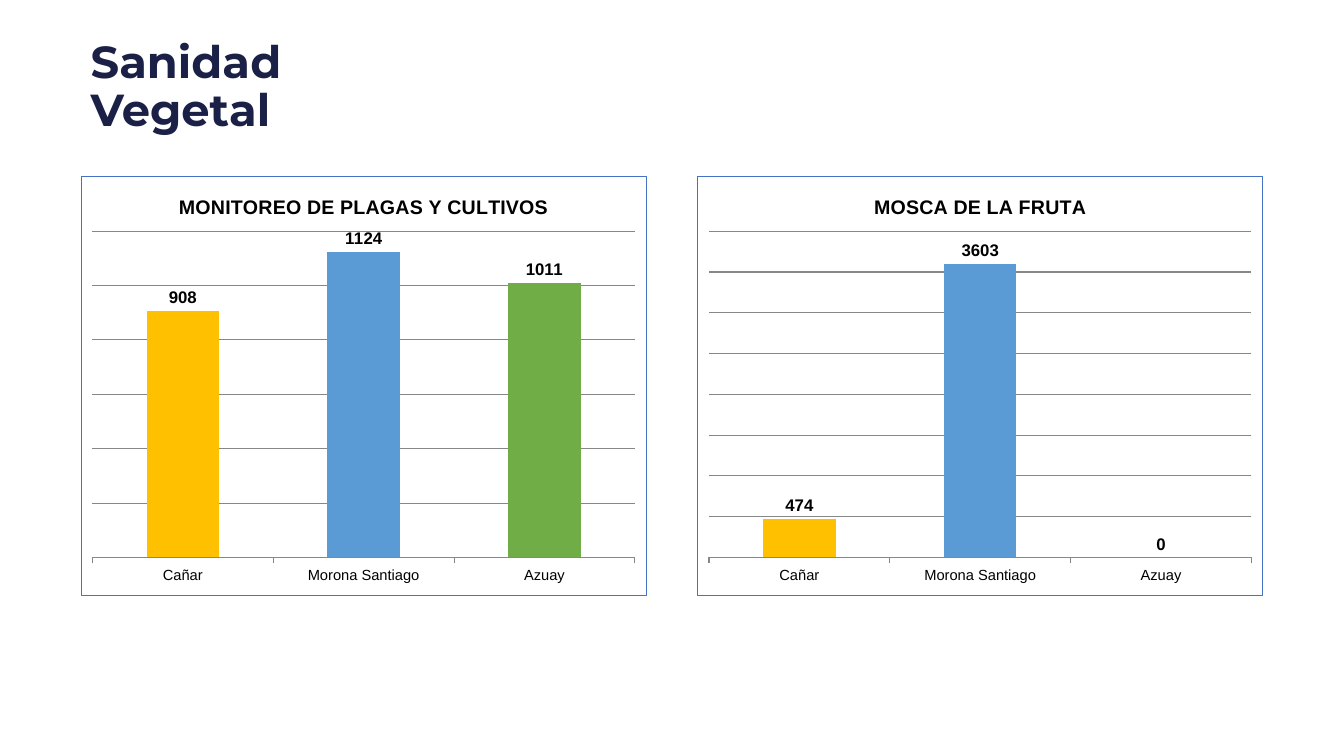
import lxml.etree
import pptx
import pptx.chart.data
import pptx.dml.color
import pptx.enum.chart
import pptx.enum.text
import pptx.oxml
import pptx.oxml.ns
import pptx.util

RGBColor = pptx.dml.color.RGBColor
Inches = pptx.util.Inches
Pt = pptx.util.Pt

NAVY = RGBColor(0x1A, 0x20, 0x46)
BLACK = RGBColor(0, 0, 0)
GRID_GREY = RGBColor(0x87, 0x87, 0x87)
BORDER_BLUE = RGBColor(0x44, 0x72, 0xC4)
GOLD = RGBColor(0xFF, 0xC0, 0x00)
SKY = RGBColor(0x5B, 0x9B, 0xD5)
GREEN = RGBColor(0x70, 0xAD, 0x47)

PROVINCES = {"Cañar": GOLD, "Morona Santiago": SKY, "Azuay": GREEN}
# title, values, axis maximum, gridline step
CHARTS = [
    ("MONITOREO DE PLAGAS Y CULTIVOS", (908, 1124, 1011), 1200, 200),
    ("MOSCA DE LA FRUTA", (474, 3603, 0), 4000, 500),
]
PLOT_SHARES = {"x": 0.02, "y": 0.13, "w": 0.96, "h": 0.78}

WIDTH, HEIGHT = Inches(13.33), Inches(7.5)
MARGIN, GAP = Inches(0.8), Inches(0.5)
CHART_TOP, CHART_HEIGHT = Inches(1.75), Inches(4.16)
CHART_WIDTH = (WIDTH - 2 * MARGIN - GAP) // 2


def write(frame, text, *, size, name, color, spacing=None):
    """Put one bold paragraph in a text frame."""
    para = frame.paragraphs[0]
    para.line_spacing = spacing
    span = para.add_run()
    span.text = text
    span.font.size = Pt(size)
    span.font.name = name
    span.font.bold = True
    span.font.color.rgb = color


def chart_xml(body):
    """Parse a chart element whose prefixes are c and a."""
    names = pptx.oxml.ns.nsdecls("c", "a")
    return pptx.oxml.parse_xml(body.replace(">", f" {names}>", 1))


deck = pptx.Presentation()
deck.slide_width, deck.slide_height = WIDTH, HEIGHT
page = deck.slides.add_slide(deck.slide_layouts[5])

heading = page.shapes.title
heading.left, heading.top = MARGIN, Inches(0.34)
heading.width, heading.height = Inches(3.6), Inches(1.08)
frame = heading.text_frame
frame.word_wrap = True
frame.auto_size = pptx.enum.text.MSO_AUTO_SIZE.NONE
frame.vertical_anchor = pptx.enum.text.MSO_ANCHOR.TOP
frame.paragraphs[0].alignment = pptx.enum.text.PP_ALIGN.LEFT
write(frame, "Sanidad Vegetal", size=32, name="Montserrat", color=NAVY, spacing=0.9)

for column, (title, values, maximum, step) in enumerate(CHARTS):
    data = pptx.chart.data.CategoryChartData()
    data.categories = list(PROVINCES)
    data.add_series("Series 1", values)
    chart = page.shapes.add_chart(
        pptx.enum.chart.XL_CHART_TYPE.COLUMN_CLUSTERED,
        MARGIN + column * (CHART_WIDTH + GAP), CHART_TOP,
        CHART_WIDTH, CHART_HEIGHT, data,
    ).chart
    chart.has_legend = False
    chart.font.name = "Arial"
    chart.font.size = Pt(14)
    chart.font.color.rgb = BLACK
    write(chart.chart_title.text_frame, title, size=14, name="Arial", color=BLACK)
    chart.chart_title.include_in_layout = False

    provinces_axis = chart.category_axis
    provinces_axis.major_tick_mark = pptx.enum.chart.XL_TICK_MARK.OUTSIDE
    provinces_axis.tick_labels.font.size = Pt(10.5)
    values_axis = chart.value_axis
    values_axis.visible = False
    values_axis.minimum_scale = 0
    values_axis.maximum_scale = maximum
    values_axis.major_unit = step
    values_axis.has_major_gridlines = True
    for line in (provinces_axis.format.line, values_axis.major_gridlines.format.line):
        line.color.rgb = GRID_GREY
        line.width = Pt(0.75)

    plot = chart.plots[0]
    plot.gap_width = 150
    plot.vary_by_categories = False
    series = plot.series[0]
    series.format.fill.solid()
    series.format.fill.fore_color.rgb = BORDER_BLUE
    for index, color in enumerate(PROVINCES.values()):
        fill = series.points[index].format.fill
        fill.solid()
        fill.fore_color.rgb = color

    labels = series.data_labels
    labels.show_value = True
    labels.position = pptx.enum.chart.XL_LABEL_POSITION.OUTSIDE_END
    labels.font.size = Pt(12)
    labels.font.bold = True

    root = chart.element
    area = root.find(".//" + pptx.oxml.ns.qn("c:plotArea"))
    for layout in area.findall(pptx.oxml.ns.qn("c:layout")):
        area.remove(layout)
    modes = '<c:xMode val="edge"/><c:yMode val="edge"/>'
    shares = "".join(f'<c:{key} val="{share}"/>' for key, share in PLOT_SHARES.items())
    area.insert(0, chart_xml(
        '<c:layout><c:manualLayout><c:layoutTarget val="inner"/>'
        f"{modes}{shares}</c:manualLayout></c:layout>"
    ))
    root.find(pptx.oxml.ns.qn("c:chart")).addnext(chart_xml(
        f'<c:spPr><a:noFill/><a:ln w="{Pt(0.75)}"><a:solidFill>'
        f'<a:srgbClr val="{BORDER_BLUE}"/></a:solidFill></a:ln></c:spPr>'
    ))

deck.save("out.pptx")
